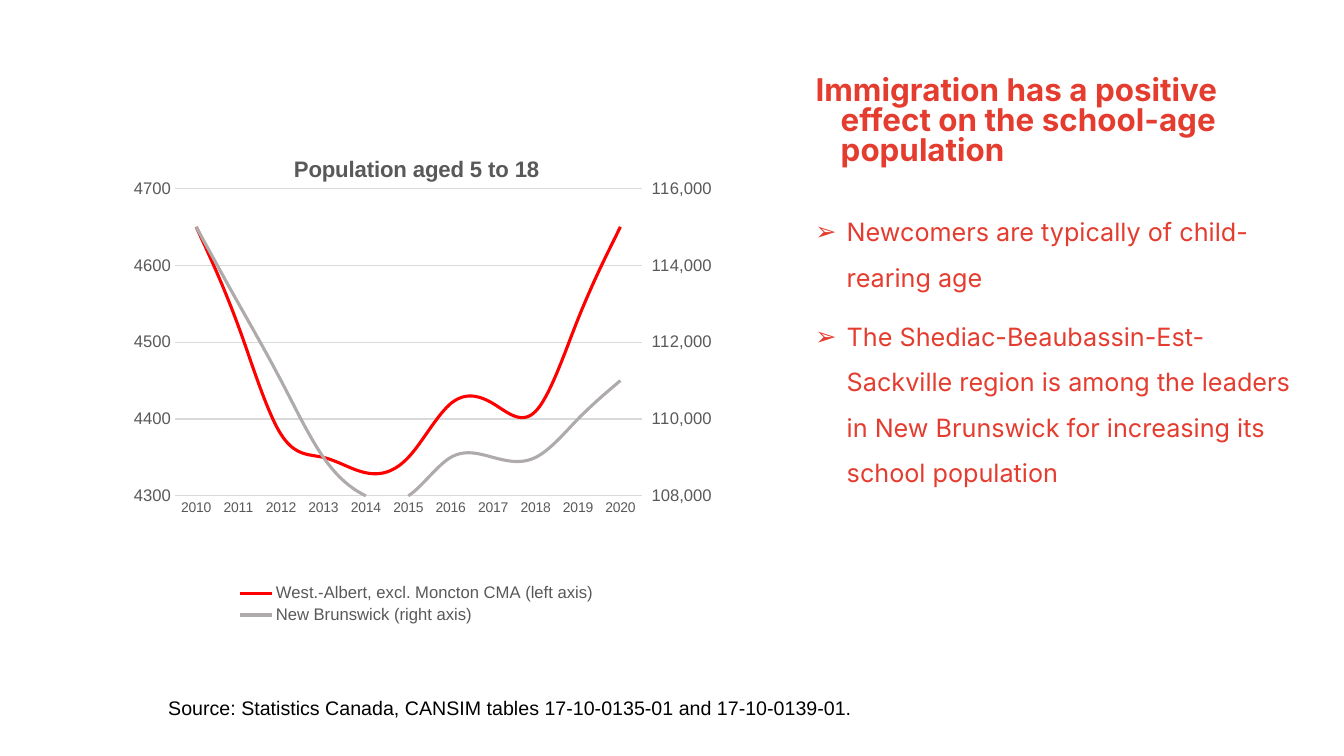
from copy import deepcopy

from lxml import etree
from pptx import Presentation
from pptx.chart.data import CategoryChartData
from pptx.dml.color import RGBColor
from pptx.enum import chart as chart_enum, text as text_enum
from pptx.oxml import ns
from pptx.util import Inches, Pt

RED = RGBColor(0xE4, 0x3D, 0x30)
LINE_RED = RGBColor(0xFF, 0x00, 0x00)
LINE_GREY = RGBColor(0xAF, 0xAB, 0xAB)
GRID = RGBColor(0xD9, 0xD9, 0xD9)
LABEL = RGBColor(0x59, 0x59, 0x59)
BLACK = RGBColor(0x00, 0x00, 0x00)

YEARS = [str(year) for year in range(2010, 2021)]
SERIES = [
    ("West.-Albert, excl. Moncton CMA (left axis)", LINE_RED,
     [4650, 4520, 4380, 4350, 4330, 4350, 4420, 4420, 4410, 4530, 4650]),
    ("New Brunswick (right axis)", LINE_GREY,
     [115000, 113000, 111000, 109000, 108000, 108000, 109000, 109000, 109000, 110000, 111000]),
]


def set_font(font, size, color, name="Arial", bold=False):
    font.size = Pt(size)
    font.name = name
    font.bold = bold
    font.color.rgb = color


def add_child(parent, tag, **attributes):
    child = etree.SubElement(parent, ns.qn(tag))
    for key, value in attributes.items():
        child.set(key, str(value))
    return child


def add_text(slide, box, paragraphs, size, color, font="Arial", bold=False, margin=0,
             indent=0, line_spacing=None, space_before=0, bullet=None, grow=False):
    shape = slide.shapes.add_textbox(*map(Inches, box))
    frame = shape.text_frame
    frame.word_wrap = True
    if grow:
        frame.auto_size = text_enum.MSO_AUTO_SIZE.SHAPE_TO_FIT_TEXT
    for index, content in enumerate(paragraphs):
        paragraph = frame.paragraphs[0] if index == 0 else frame.add_paragraph()
        if line_spacing:
            paragraph.line_spacing = line_spacing
        if index:
            paragraph.space_before = Pt(space_before)
        properties = paragraph._p.get_or_add_pPr()
        properties.set("marL", str(Inches(margin)))
        properties.set("indent", str(Inches(indent)))
        if bullet:
            add_child(add_child(properties, "a:buClr"), "a:srgbClr", val=color)
            add_child(properties, "a:buFont", typeface="Arial")
            add_child(properties, "a:buChar", char=bullet)
        run = paragraph.add_run()
        run.text = content
        set_font(run.font, size, color, font, bold)
    return shape


def set_layout(parent, position, chart_box, left, top, width=None, height=None):
    """Place a chart part, in inches from the chart's corner; a sized part is the plot."""
    for old in parent.findall(ns.qn("c:layout")):
        parent.remove(old)
    layout = etree.Element(ns.qn("c:layout"))
    manual = add_child(layout, "c:manualLayout")
    if width:
        add_child(manual, "c:layoutTarget", val="inner")
    add_child(manual, "c:xMode", val="edge")
    add_child(manual, "c:yMode", val="edge")
    chart_width, chart_height = chart_box[2:]
    for tag, length, whole in (("c:x", left, chart_width), ("c:y", top, chart_height),
                               ("c:w", width, chart_width), ("c:h", height, chart_height)):
        if length is not None:
            add_child(manual, tag, val=length / whole)
    parent.insert(position, layout)


def style_axis(axis, size):
    axis.major_tick_mark = axis.minor_tick_mark = chart_enum.XL_TICK_MARK.NONE
    set_font(axis.tick_labels.font, size, LABEL)


def move_to_right_axis(plot_area, minimum, maximum, step):
    """Give the last series its own line group and value axis."""
    left_lines = plot_area.find(ns.qn("c:lineChart"))
    right_lines = deepcopy(left_lines)
    left_series = left_lines.findall(ns.qn("c:ser"))
    right_series = right_lines.findall(ns.qn("c:ser"))
    left_lines.remove(left_series[-1])
    for series in right_series[:-1]:
        right_lines.remove(series)
    left_lines.addnext(right_lines)

    category = deepcopy(plot_area.find(ns.qn("c:catAx")))
    value = deepcopy(plot_area.find(ns.qn("c:valAx")))
    ids = ("50010", "50020")
    for reference, axis_id in zip(right_lines.findall(ns.qn("c:axId")), ids):
        reference.set("val", axis_id)
    for axis, own, other in ((category, *ids), (value, *reversed(ids))):
        axis.find(ns.qn("c:axId")).set("val", own)
        axis.find(ns.qn("c:crossAx")).set("val", other)
    category.find(ns.qn("c:delete")).set("val", "1")
    value.remove(value.find(ns.qn("c:majorGridlines")))
    for tag, setting in (("c:axPos", "r"), ("c:crosses", "max"), ("c:majorTickMark", "out"),
                         ("c:majorUnit", step)):
        value.find(ns.qn(tag)).set("val", str(setting))
    value.find(ns.qn("c:numFmt")).set("formatCode", "#,##0")
    scaling = value.find(ns.qn("c:scaling"))
    scaling.find(ns.qn("c:min")).set("val", str(minimum))
    scaling.find(ns.qn("c:max")).set("val", str(maximum))
    plot_area.find(ns.qn("c:valAx")).addnext(value)
    value.addnext(category)


def add_population_chart(slide, box):
    data = CategoryChartData()
    data.categories = YEARS
    for name, _, values in SERIES:
        data.add_series(name, values)
    chart = slide.shapes.add_chart(
        chart_enum.XL_CHART_TYPE.LINE, *map(Inches, box), data).chart
    set_font(chart.font, 10, BLACK)

    # Title and legend
    chart.has_title = True
    title = chart.chart_title
    title.include_in_layout = False
    run = title.text_frame.paragraphs[0].add_run()
    run.text = "Population aged 5 to 18"
    set_font(run.font, 16, LABEL, bold=True)
    set_layout(title._element, 1, box, 1.63, 0.16)
    chart.has_legend = True
    chart.legend.position = chart_enum.XL_LEGEND_POSITION.BOTTOM
    chart.legend.include_in_layout = False
    set_font(chart.legend.font, 12, LABEL)

    # Lines
    for series, (_, color, _) in zip(chart.plots[0].series, SERIES):
        series.smooth = True
        series.marker.style = chart_enum.XL_MARKER_STYLE.NONE
        series.format.line.color.rgb = color
        series.format.line.width = Pt(2.25)
    chart.plots[0].vary_by_categories = False

    # Axes
    style_axis(chart.category_axis, 10)
    value_axis = chart.value_axis
    style_axis(value_axis, 12)
    value_axis.minimum_scale, value_axis.maximum_scale = 4300, 4700
    value_axis.major_unit = 100
    value_axis.tick_labels.number_format = "0"
    value_axis.tick_labels.number_format_is_linked = False
    value_axis.format.line.fill.background()
    value_axis.has_major_gridlines = True
    for line in (chart.category_axis.format.line, value_axis.major_gridlines.format.line):
        line.color.rgb = GRID
        line.width = Pt(0.75)
    plot_area = chart._chartSpace.chart.plotArea
    set_layout(plot_area, 0, box, 0.48, 0.53, 4.67, 3.05)
    move_to_right_axis(plot_area, 108000, 116000, 2000)


def add_message(slide, box):
    left, top, width, height = box
    heading_height = 1.23
    add_text(slide, (left, top, 5.09, heading_height),
             ["Immigration has a positive effect on the school-age population"],
             size=22.4, color=RED, font="Inter", bold=True,
             margin=0.5, indent=-0.25, line_spacing=0.8)
    add_text(slide, (left, top + heading_height, width, height - heading_height),
             ["Newcomers are typically of child-rearing age",
              "The Shediac-Beaubassin-Est-Sackville region is among the leaders "
              "in New Brunswick for increasing its school population"],
             size=18, color=RED, font="Inter", margin=0.56, indent=-0.31,
             line_spacing=1.5, space_before=10, bullet="➢")


def main():
    presentation = Presentation()
    presentation.slide_width, presentation.slide_height = Inches(13.33), Inches(7.5)
    slide = presentation.slides.add_slide(presentation.slide_layouts[6])
    add_message(slide, (7.74, 0.72, 5.27, 6.01))
    add_text(slide, (1.57, 6.85, 9.36, 0.34),
             ["Source: Statistics Canada, CANSIM tables 17-10-0135-01 and 17-10-0139-01."],
             size=14, color=BLACK, grow=True)
    add_population_chart(slide, (1.26, 1.34, 5.8, 4.89))
    presentation.save("out.pptx")


if __name__ == "__main__":
    main()
